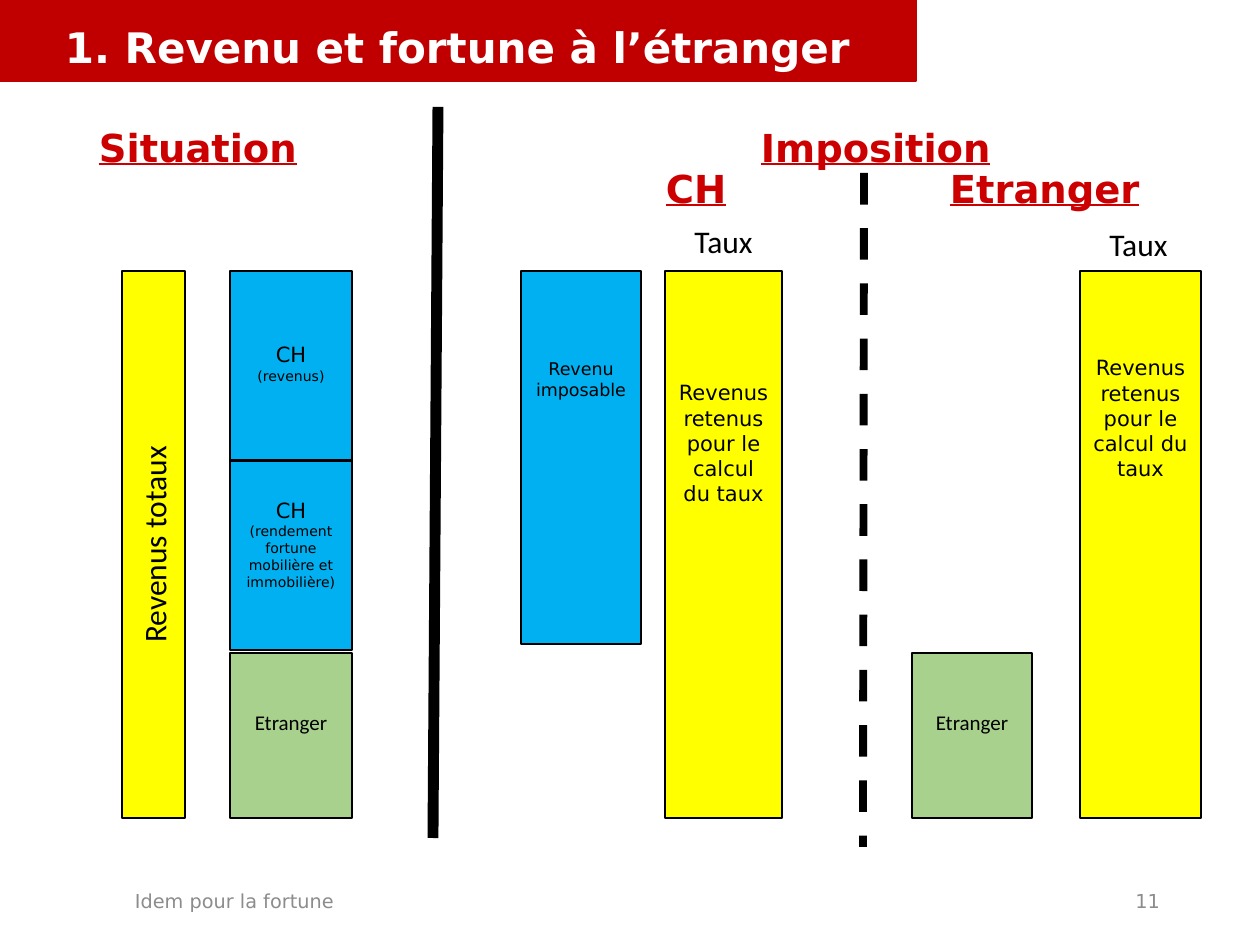
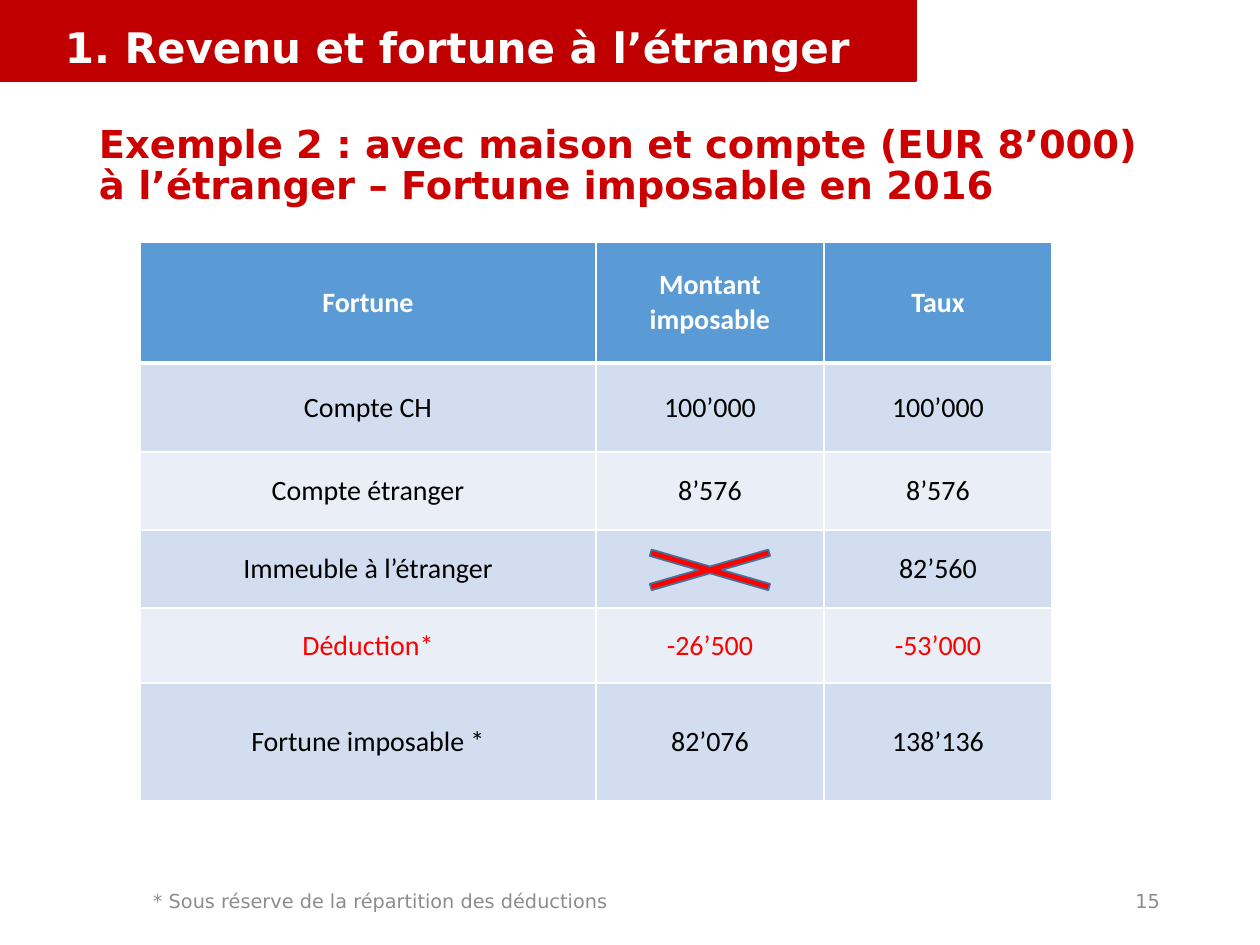
from lxml import etree
from pptx import Presentation
from pptx import util as u
from pptx.dml.color import RGBColor
from pptx.enum import dml, shapes, text
from pptx.oxml import ns

PX = 914400 / 126
BLACK = RGBColor(0, 0, 0)
WHITE = RGBColor(255, 255, 255)
BAND_RED = RGBColor(0xC0, 0, 0)
HEADING_RED = RGBColor(0xCC, 0, 0)
RED = RGBColor(255, 0, 0)
GREY = RGBColor(0x8C, 0x8C, 0x8C)
YELLOW = RGBColor(255, 255, 0)
BLUE = RGBColor(0, 0xB0, 0xF0)
GREEN = RGBColor(0xA9, 0xD1, 0x8E)
HEADER_BLUE = RGBColor(0x5B, 0x9B, 0xD5)
ROW_DARK = RGBColor(0xD2, 0xDE, 0xEF)
ROW_LIGHT = RGBColor(0xEA, 0xEF, 0xF7)
CROSS_LINE = RGBColor(0x43, 0x73, 0x9E)
SANS, BODY = "DejaVu Sans", "Calibri"
LEFT, CENTER, RIGHT = text.PP_ALIGN.LEFT, text.PP_ALIGN.CENTER, text.PP_ALIGN.RIGHT
TOP, MIDDLE, BOTTOM = text.MSO_ANCHOR.TOP, text.MSO_ANCHOR.MIDDLE, text.MSO_ANCHOR.BOTTOM


def emu(*px):
    return [u.Emu(round(v * PX)) for v in px]


class Deck:
    def __init__(self):
        self.prs = Presentation()
        self.prs.slide_width, self.prs.slide_height = u.Inches(10), u.Inches(7.5)

    def slide(self, title, note, note_x, number):
        self.s = self.prs.slides.add_slide(self.prs.slide_layouts[6])
        self.shape((0, 0, 916, 81), BAND_RED, BAND_RED)
        self.text((52, 10, 1086, 68), title, 24, color=WHITE, bold=True,
                  anchor=BOTTOM, spacing=0.9)
        self.text((note_x, 876, 721, 50), note, 11, color=GREY, anchor=MIDDLE)
        self.text((890, 876, 283, 50), number, 11, color=GREY, align=RIGHT, anchor=MIDDLE)

    def style(self, p, size, font=SANS, color=BLACK, bold=False, underline=False,
              align=LEFT, spacing=None):
        p.alignment = align
        if spacing:
            p.line_spacing = spacing
        f = p.font
        f.name, f.size, f.bold, f.underline = font, u.Pt(size), bold, underline
        f.color.rgb = color

    def text(self, box, words, size, anchor=TOP, **look):
        tf = self.s.shapes.add_textbox(*emu(*box)).text_frame
        tf.word_wrap = True
        tf.vertical_anchor = anchor
        tf.margin_left, tf.margin_right, tf.margin_top, tf.margin_bottom = emu(13, 13, 6, 6)
        tf.text = words
        self.style(tf.paragraphs[0], size, **look)

    def heading(self, x, y, words):
        self.text((x - 13, y, 300, 57), words, 22, color=HEADING_RED,
                  bold=True, underline=True)

    def shape(self, box, fill, line=BLACK, width=0.75, kind=shapes.MSO_SHAPE.RECTANGLE):
        sp = self.s.shapes.add_shape(kind, *emu(*box))
        sp.shadow.inherit = False
        sp.fill.solid()
        sp.fill.fore_color.rgb = fill
        sp.line.color.rgb = line
        sp.line.width = u.Pt(width)
        return sp

    def block(self, box, fill, lines, inset, font=SANS, vertical=False):
        sp = self.shape(box, fill)
        tf = sp.text_frame
        tf.word_wrap = True
        tf.vertical_anchor = TOP
        tf.margin_left, tf.margin_right, tf.margin_top, tf.margin_bottom = emu(13, 13, inset, 6)
        if vertical:
            tf._txBody.bodyPr.set("vert", "vert270")
        for i, (words, size, before) in enumerate(lines):
            p = tf.add_paragraph() if i else tf.paragraphs[0]
            p.text = words
            if before:
                p.space_before = u.Pt(before)
            self.style(p, size, font, align=CENTER)
        return sp

    def line(self, ends, width, dash=None):
        c = self.s.shapes.add_connector(shapes.MSO_CONNECTOR.STRAIGHT, *emu(*ends))
        c.line.color.rgb = BLACK
        c.line.width = u.Pt(width)
        if dash:
            c.line.dash_style = dash
        etree.SubElement(c._element.spPr, ns.qn("a:effectLst"))
        return c

    def border(self, cell, side, width):
        ln = etree.SubElement(cell._tc.get_or_add_tcPr(), ns.qn("a:ln" + side),
                              w=str(u.Pt(width)))
        fill = etree.SubElement(ln, ns.qn("a:solidFill"))
        etree.SubElement(fill, ns.qn("a:srgbClr"), val=str(WHITE))

    def table(self, x, y, widths, heights, rows, red_row):
        t = self.s.shapes.add_table(len(rows), len(widths),
                                    *emu(x, y, sum(widths), sum(heights))).table
        t.first_row = t.horz_banding = False
        for col, w in zip(t.columns, emu(*widths)):
            col.width = w
        for row, h in zip(t.rows, emu(*heights)):
            row.height = h
        for i, row in enumerate(rows):
            fill = HEADER_BLUE if i == 0 else ROW_DARK if i % 2 else ROW_LIGHT
            color = WHITE if i == 0 else RED if i == red_row else BLACK
            for j, words in enumerate(row):
                cell = t.cell(i, j)
                for side in "LRTB":
                    thick = (i, side) in ((0, "B"), (1, "T"))
                    self.border(cell, side, 3 if thick else 1)
                cell.fill.solid()
                cell.fill.fore_color.rgb = fill
                cell.vertical_anchor = MIDDLE
                cell.text = words
                self.style(cell.text_frame.paragraphs[0], 16, BODY, color,
                           bold=i == 0, align=CENTER)


def diagram(d):
    top, bottom, foreign_top = 271, 818, 653
    full, foreign = bottom - top, bottom - foreign_top
    rate = [("Revenus retenus pour le calcul du taux", 12, 0)]
    abroad = [("Etranger", 12, 0)]
    for x, y, words in ((99, 118, "Situation"), (761, 118, "Imposition"),
                        (666, 159, "CH"), (950, 159, "Etranger")):
        d.heading(x, y, words)
    d.block((122, top, 63, full), YELLOW, [("Revenus totaux", 18, 0)], 6, BODY, vertical=True)
    swiss = d.block((230, top, 122, 379), BLUE, [
        ("CH", 12, 0), ("(revenus)", 8, 0), ("CH", 12, 65),
        ("(rendement fortune mobilière et immobilière)", 8, 0)], 71)
    split = d.line((230, 461, 352, 461), 1.5)
    split.begin_connect(swiss, 1)
    split.end_connect(swiss, 3)
    for x, w in ((230, 122), (912, 120)):
        d.block((x, foreign_top, w, foreign), GREEN, abroad, 57, BODY)
    d.line((438, 107, 433, 838), 6.25)
    d.line((864, 173, 863, 847), 4.5, dml.MSO_LINE.DASH)
    d.block((521, top, 120, 373), BLUE, [("Revenu imposable", 10, 0)], 87)
    for x, w, inset, label_y in ((665, 117, 109, 216), (1080, 121, 84, 219)):
        d.block((x, top, w, full), YELLOW, rate, inset)
        d.text((x, label_y, 117, 50), "Taux", 18, font=BODY, align=CENTER)


def example(d):
    d.table(140, 242, (456, 228, 228), (121, 89, 78, 78, 75, 118), [
        ("Fortune", "Montant imposable", "Taux"),
        ("Compte CH", "100’000", "100’000"),
        ("Compte étranger", "8’576", "8’576"),
        ("Immeuble à l’étranger", "", "82’560"),
        ("Déduction*", "-26’500", "-53’000"),
        ("Fortune imposable *", "82’076", "138’136")], red_row=4)
    d.text((86, 120, 1099, 94),
           "Exemple 2 : avec maison et compte (EUR 8’000) à l’étranger – "
           "Fortune imposable en 2016",
           22, color=HEADING_RED, bold=True, anchor=BOTTOM, spacing=0.9)
    cross = d.shape((596, 537, 228, 66), RED, CROSS_LINE, 1, shapes.MSO_SHAPE.MATH_MULTIPLY)
    cross.adjustments[0] = 0.1


def main():
    d = Deck()
    title = "1. Revenu et fortune à l’étranger"
    d.slide(title, "Idem pour la fortune", 122, "11")
    diagram(d)
    d.slide(title, "* Sous réserve de la répartition des déductions", 140, "15")
    example(d)
    d.prs.save("out.pptx")


if __name__ == "__main__":
    main()
